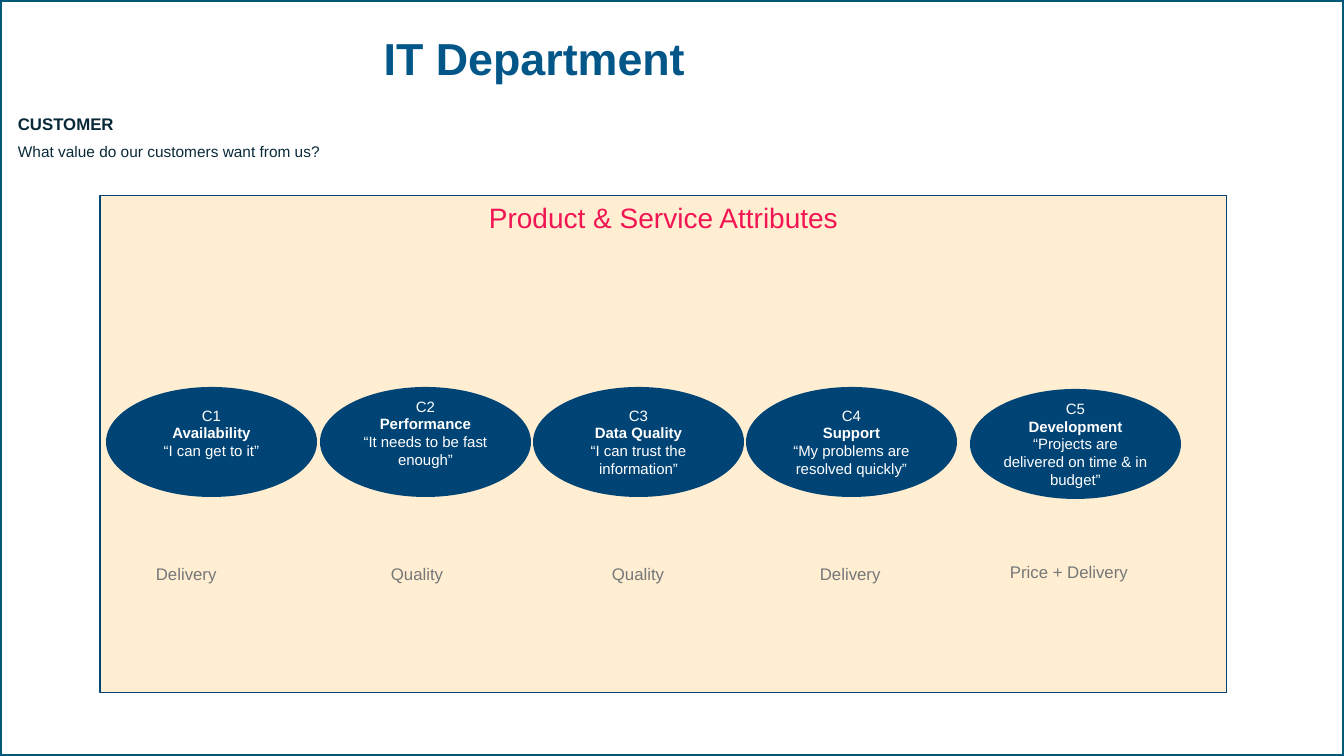
import pptx
import pptx.dml.color
import pptx.enum.shapes
import pptx.enum.text
import pptx.oxml.ns
import pptx.util
from lxml import etree

EMU_PER_PX = 914400 / 100.8
COLORS = {
    "frame": "025877",
    "title": "025788",
    "navy": "004475",
    "amber": "FFAA1B",
    "pink": "F11653",
    "ink": "092939",
    "gray": "767779",
    "white": "FFFFFF",
}
SHAPES = pptx.enum.shapes.MSO_SHAPE
CENTER = pptx.enum.text.PP_ALIGN.CENTER
LEFT = pptx.enum.text.PP_ALIGN.LEFT
MIDDLE = pptx.enum.text.MSO_ANCHOR.MIDDLE
TOP = pptx.enum.text.MSO_ANCHOR.TOP
ATTRIBUTES = [
    (106, 387, 23, ("C1", "Availability", "“I can get to it”"), 146, 559, 82, "Delivery"),
    (320, 387, 23, ("C2", "Performance", "“It needs to be fast enough”"), 381, 559, 73, "Quality"),
    (533, 387, 5, ("C3", "Data Quality", "“I can trust the information”"), 602, 559, 73, "Quality"),
    (746, 387, 5, ("C4", "Support", "“My problems are resolved quickly”"), 810, 559, 82, "Delivery"),
    (970, 389, 5, ("C5", "Development", "“Projects are delivered on time & in budget”"),
     1000, 557, 139, "Price + Delivery"),
]


def px(length):
    """Turn pixels into EMU."""
    return pptx.util.Emu(round(length * EMU_PER_PX))


def rgb(name):
    """Look up a named colour."""
    return pptx.dml.color.RGBColor.from_string(COLORS[name])


def add_shape(slide, kind, box, fill=None, line=None, line_width=1.0, opacity=100):
    """Add a flat preset shape."""
    shape = slide.shapes.add_shape(kind, *map(px, box))
    shape.shadow.inherit = False
    if fill:
        shape.fill.solid()
        shape.fill.fore_color.rgb = rgb(fill)
        if opacity < 100:
            color = shape.fill._xPr.find(".//" + pptx.oxml.ns.qn("a:srgbClr"))
            alpha = etree.SubElement(color, pptx.oxml.ns.qn("a:alpha"))
            alpha.set("val", str(opacity * 1000))
    else:
        shape.fill.background()
    if line:
        shape.line.color.rgb = rgb(line)
        shape.line.width = pptx.util.Pt(line_width)
    else:
        shape.line.fill.background()
    return shape


def write_lines(shape, lines, color, align=LEFT, anchor=TOP, wrap=True):
    """Write (text, size, bold) lines as paragraphs and return them."""
    frame = shape.text_frame
    frame.word_wrap = wrap
    frame.vertical_anchor = anchor
    frame.text = "\n".join(text for text, size, bold in lines)
    for paragraph, (text, size, bold) in zip(frame.paragraphs, lines):
        paragraph.alignment = align
        paragraph.font.name = "Arial"
        paragraph.font.size = pptx.util.Pt(size)
        paragraph.font.bold = bold
        paragraph.font.color.rgb = rgb(color)
    return frame.paragraphs


def add_text(slide, box, lines, color, **layout):
    """Add a text box and return its paragraphs."""
    shape = slide.shapes.add_textbox(*map(px, box))
    return write_lines(shape, lines, color, **layout)


def add_attribute(slide, left, top, bottom_inset, texts):
    """Add an ellipse with a code, a bold name and a customer quote."""
    ellipse = add_shape(slide, SHAPES.OVAL, (left, top, 211, 110), fill="navy")
    frame = ellipse.text_frame
    frame.margin_left = frame.margin_right = 0
    frame.margin_top = px(5)
    frame.margin_bottom = px(bottom_inset)
    code, name, quote = texts
    lines = [(code, 10.7, False), (name, 10.7, True), (quote, 10.7, False)]
    write_lines(ellipse, lines, "white", align=CENTER, anchor=MIDDLE)


def main():
    """Build the IT Department slide."""
    presentation = pptx.Presentation()
    presentation.slide_width = px(1344)
    presentation.slide_height = px(756)
    slide = presentation.slides.add_slide(presentation.slide_layouts[6])

    add_shape(slide, SHAPES.RECTANGLE, (0, 0, 1344, 756), line="frame", line_width=3)
    panel = add_shape(slide, SHAPES.RECTANGLE, (100, 196, 1127, 497),
                      fill="amber", line="navy", line_width=0.75, opacity=20)
    write_lines(panel, [("Product & Service Attributes", 20, False)], "pink", align=CENTER)

    title = add_text(slide, (37, 28, 995, 65), [("IT Department", 32, True)], "title",
                     align=CENTER, anchor=MIDDLE)
    title[0].line_spacing = 0.9
    customer = add_text(slide, (8, 109, 599, 58), [
        ("CUSTOMER", 12, True),
        ("What value do our customers want from us?", 11, False),
    ], "ink")
    customer[1].space_before = pptx.util.Pt(6)

    for left, top, inset, texts, label_left, label_top, label_width, label in ATTRIBUTES:
        add_attribute(slide, left, top, inset, texts)
        add_text(slide, (label_left, label_top, label_width, 30), [(label, 12, False)],
                 "gray", wrap=False)

    presentation.save("out.pptx")


if __name__ == "__main__":
    main()
